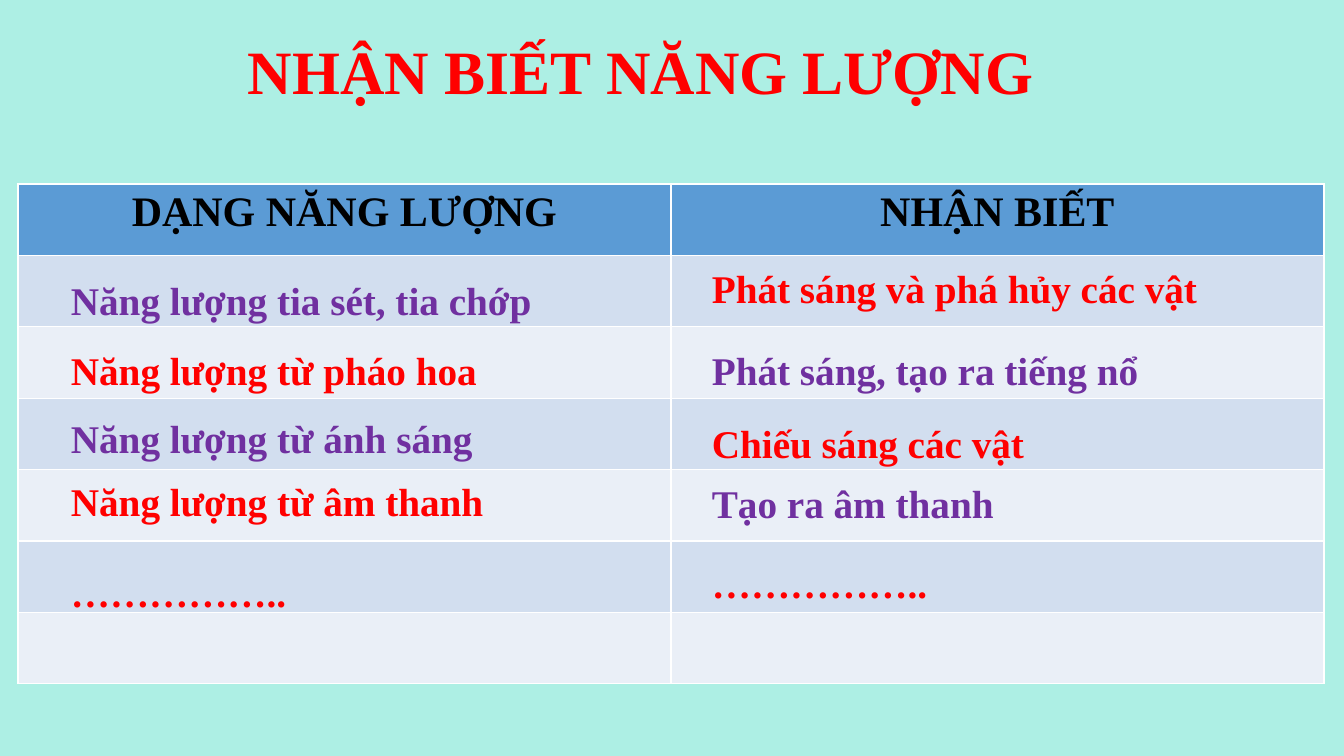
"""Build the slide on recognising forms of energy."""
from pptx import Presentation
from pptx import util as u
from pptx.dml.color import RGBColor
from pptx.enum import text

HEX = {"back": "ADEFE4", "red": "FF0000", "plum": "7030A0", "black": "000000",
       "head": "5B9BD5", "dark": "D2DEEF", "light": "EAEFF7"}
FONT = "Times New Roman"
TITLE = "NHẬN BIẾT NĂNG LƯỢNG"
HEADS = ["DẠNG NĂNG LƯỢNG", "NHẬN BIẾT"]
ROWS = 7
GRID = (18, 184, 1306, 500)
NOTES = [
    (61, 507, [
        (271, "plum", "Năng lượng tia sét, tia chớp"),
        (341, "red", "Năng lượng từ pháo hoa"),
        (409, "plum", "Năng lượng từ ánh sáng"),
        (472, "red", "Năng lượng từ âm thanh"),
        (563, "red", "…………….."),
    ]),
    (702, 580, [
        (259, "red", "Phát sáng và phá hủy các vật"),
        (341, "plum", "Phát sáng, tạo ra tiếng nổ"),
        (414, "red", "Chiếu sáng các vật"),
        (474, "plum", "Tạo ra âm thanh"),
        (554, "red", "…………….."),
    ]),
]
SCALE = 914400 / 100.8


def px(*nums):
    return [u.Emu(round(n * SCALE)) for n in nums]


def paint(fill, hue):
    fill.solid()
    fill.fore_color.rgb = RGBColor.from_string(HEX[hue])


def write(frame, words, size, hue):
    par = frame.paragraphs[0]
    par.text = words
    par.font.name = FONT
    par.font.size = u.Pt(size)
    par.font.bold = True
    par.font.color.rgb = RGBColor.from_string(HEX[hue])
    return par


def label(slide, box, words, size, hue):
    frame = slide.shapes.add_textbox(*px(*box)).text_frame
    frame.word_wrap = True
    return frame, write(frame, words, size, hue)


def main():
    deck = Presentation()
    deck.slide_width, deck.slide_height = px(1344, 756)
    slide = deck.slides.add_slide(deck.slide_layouts[6])
    paint(slide.background.fill, "back")

    frame, par = label(slide, (238, 15, 950, 119), TITLE, 44, "red")
    frame.vertical_anchor = text.MSO_ANCHOR.MIDDLE
    par.line_spacing = 0.9

    table = slide.shapes.add_table(ROWS, len(HEADS), *px(*GRID)).table
    for row in range(ROWS):
        band = "head" if row == 0 else "dark" if row % 2 else "light"
        for col in range(len(HEADS)):
            paint(table.cell(row, col).fill, band)
    for col, head in enumerate(HEADS):
        par = write(table.cell(0, col).text_frame, head, 30, "black")
        par.alignment = text.PP_ALIGN.CENTER

    for left, width, lines in NOTES:
        for top, hue, words in lines:
            label(slide, (left, top, width, 57), words, 28, hue)

    deck.save("out.pptx")


if __name__ == "__main__":
    main()
